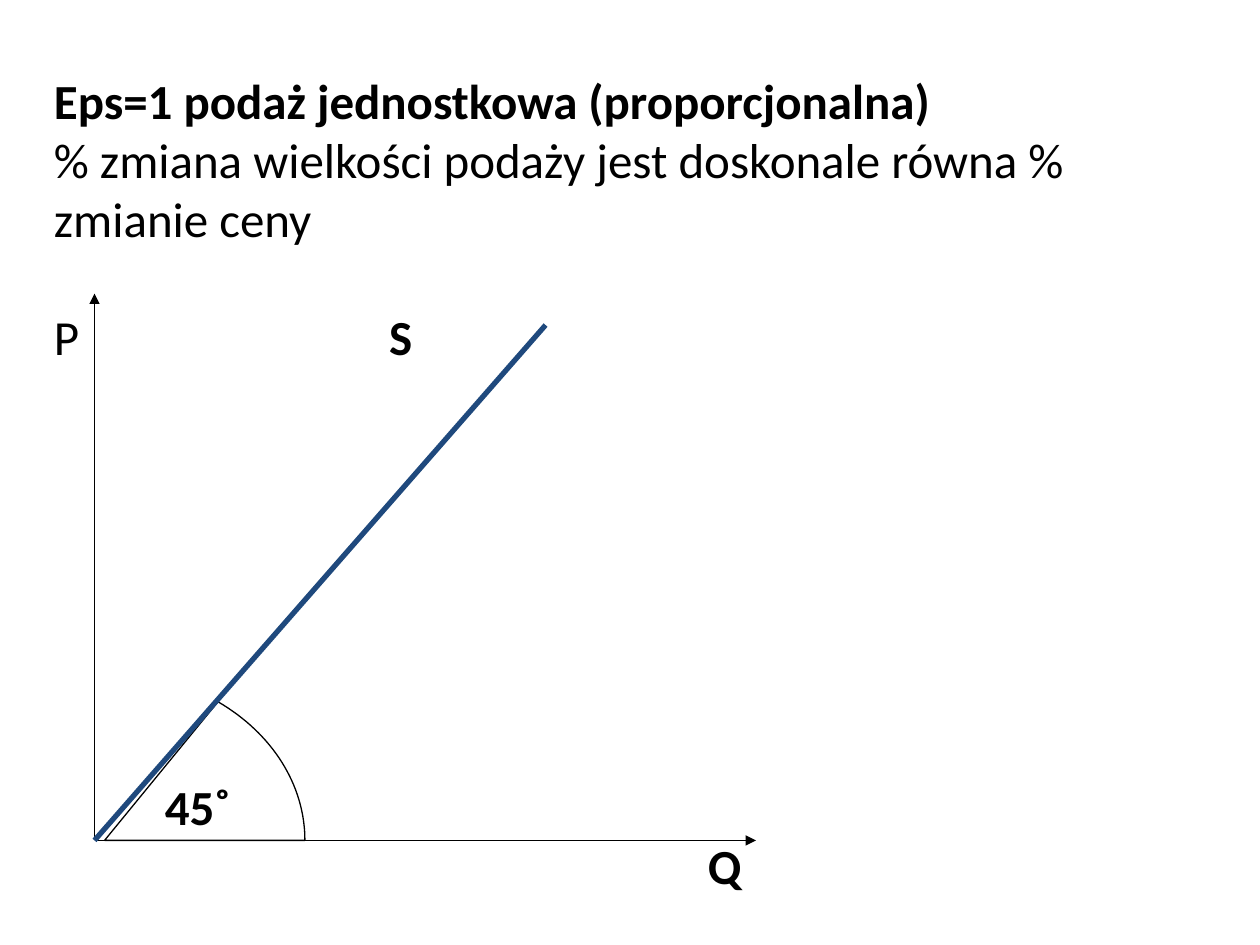
from lxml.etree import SubElement
from pptx import Presentation
from pptx.dml.color import RGBColor
from pptx.enum.shapes import MSO_CONNECTOR
from pptx.enum.text import MSO_ANCHOR
from pptx.oxml.ns import qn
from pptx.util import Inches, Pt

BLACK = "000000"
SUPPLY_BLUE = "1F497D"
ORIGIN = (0.75, 6.67)


def color(value):
    return RGBColor.from_string(value)


def apply_format(target, values):
    for name, value in values.items():
        setattr(target, name, value)


def cubic_points(start, control_one, control_two, end, steps=32):
    points = []
    for step in range(steps + 1):
        t = step / steps
        weights = ((1 - t) ** 3, 3 * t * (1 - t) ** 2, 3 * t**2 * (1 - t), t**3)
        corners = (start, control_one, control_two, end)
        points.append(tuple(
            sum(weight * corner[axis] for weight, corner in zip(weights, corners))
            for axis in (0, 1)
        ))
    return points


class SlideBuilder:
    font = {"name": "Calibri", "size": Pt(28)}
    frame = {"word_wrap": True, "vertical_anchor": MSO_ANCHOR.TOP}

    def __init__(self, slide):
        self.slide = slide

    def text(self, left, top, width, height, paragraphs):
        box = self.slide.shapes.add_textbox(
            Inches(left), Inches(top), Inches(width), Inches(height)
        )
        apply_format(box.text_frame, self.frame)
        for index, (words, bold) in enumerate(paragraphs):
            paragraph = (
                box.text_frame.add_paragraph() if index
                else box.text_frame.paragraphs[0]
            )
            run = paragraph.add_run()
            run.text = words
            apply_format(run.font, {**self.font, "bold": bold})
            run.font.color.rgb = color(BLACK)

    def line(self, start, end, line_color=BLACK, width=0.75, arrow=False):
        connector = self.slide.shapes.add_connector(
            MSO_CONNECTOR.STRAIGHT, *(Inches(value) for value in (*start, *end))
        )
        connector.line.color.rgb = color(line_color)
        connector.line.width = Pt(width)
        if arrow:
            outline = connector.line._get_or_add_ln()
            SubElement(outline, qn("a:tailEnd"), type="triangle")
        SubElement(connector._element.spPr, qn("a:effectLst"))

    def outline(self, points):
        first, *others = [(Inches(x), Inches(y)) for x, y in points]
        builder = self.slide.shapes.build_freeform(*first)
        builder.add_line_segments(others, close=True)
        shape = builder.convert_to_shape()
        shape.shadow.inherit = False
        shape.fill.background()
        shape.line.color.rgb = color(BLACK)
        shape.line.width = Pt(0.75)


def main():
    presentation = Presentation()
    presentation.slide_width = Inches(10)
    presentation.slide_height = Inches(7.5)
    slide = presentation.slides.add_slide(presentation.slide_layouts[6])
    builder = SlideBuilder(slide)

    builder.text(0.33, 0.51, 9.33, 1.5, [
        ("Eps=1 podaż jednostkowa (proporcjonalna)", True),
        ("% zmiana wielkości podaży jest doskonale równa % zmianie ceny", False),
    ])
    for words, left, top, width, bold in (
        ("P", 0.33, 2.38, 0.5, False),
        ("S", 2.99, 2.38, 0.5, True),
        ("45˚", 1.21, 6.11, 0.9, True),
        ("Q", 5.52, 6.58, 0.6, True),
    ):
        builder.text(left, top, width, 0.57, [(words, bold)])

    for axis_end in ((0.75, 2.33), (6, 6.67)):
        builder.line(ORIGIN, axis_end, arrow=True)
    arc = cubic_points((1.73, 5.57), (2.16, 5.82), (2.42, 6.23), (2.42, 6.67))
    builder.outline(arc + [(0.83, 6.67)])
    builder.line(ORIGIN, (4.33, 2.58), SUPPLY_BLUE, 3)

    presentation.save("out.pptx")


if __name__ == "__main__":
    main()
